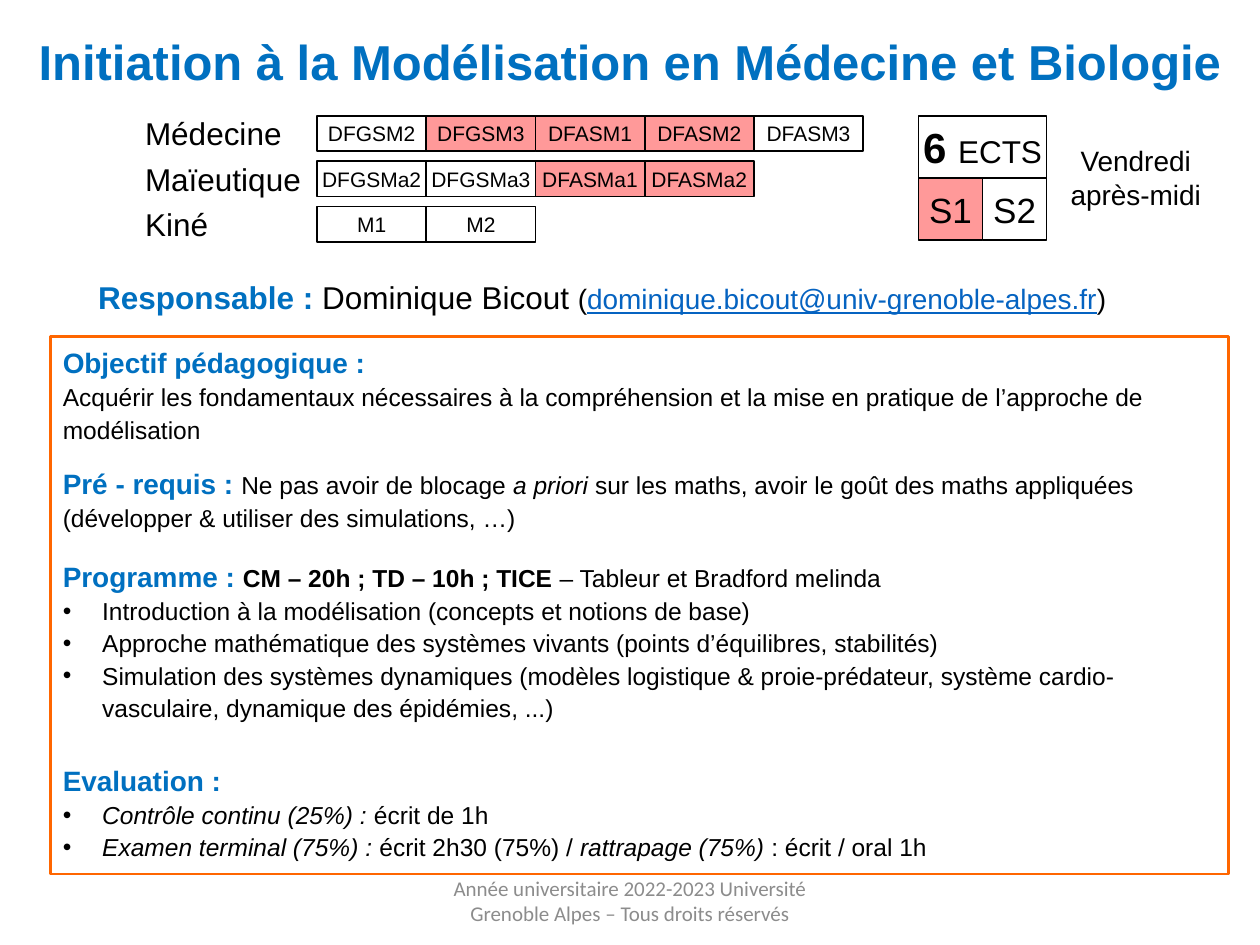
from pptx import Presentation
from pptx.dml.color import RGBColor as Rgb
from pptx.enum.shapes import MSO_SHAPE as Kind
from pptx.enum.text import MSO_ANCHOR as Anchor, PP_ALIGN as Align
from pptx.oxml.ns import qn
from pptx.util import Pt
from lxml.etree import SubElement as Sub

HUES = {"blue": "0070C0", "black": "000000", "pink": "FF9999", "white": "FFFFFF",
        "orange": "FF6600", "gray": "8C8C8C", "link": "0563C1"}

STYLES = {
    "title": (28, "blue", "b"), "head": (16, "blue", "b"), "lead": (18, "blue", "b"),
    "body": (14, "black", ""), "bold": (14, "black", "b"), "ital": (14, "black", "i"),
    "label": (18, "black", ""), "cell": (12, "black", ""), "term": (20, "black", ""),
    "count": (24, "black", "b"), "note": (16, "black", ""), "mail": (16, "link", "u"),
    "foot": (12, "gray", ""),
}

TITLE = "Initiation à la Modélisation en Médecine et Biologie"
FOOT = "Année universitaire 2022-2023 Université Grenoble Alpes – Tous droits réservés"
TRACKS = [
    ("Médecine", ["DFGSM2", "DFGSM3", "DFASM1", "DFASM2", "DFASM3"], (1, 2, 3)),
    ("Maïeutique", ["DFGSMa2", "DFGSMa3", "DFASMa1", "DFASMa2"], (2, 3)),
    ("Kiné", ["M1", "M2"], ()),
]
TERMS = [("S1", "pink"), ("S2", "white")]
DAY = ["Vendredi", "après-midi"]
CHIEF = [("Responsable : ", "lead"), ("Dominique Bicout ", "label"), ("(", "note"),
         ("dominique.bicout@univ-grenoble-alpes.fr", "mail"), (")", "note")]

COURSE = [
    (0, False, [("Objectif pédagogique :", "head")]),
    (0, False, [("Acquérir les fondamentaux nécessaires à la compréhension et la mise en "
                 "pratique de l’approche de modélisation", "body")]),
    (11, False, [("Pré - requis : ", "head"), ("Ne pas avoir de blocage", "body"),
                 (" a priori", "ital"),
                 (" sur les maths, avoir le goût des maths appliquées "
                  "(développer & utiliser des simulations, …)", "body")]),
    (13.5, False, [("Programme : ", "head"), ("CM – 20h ; TD – 10h ; TICE ", "bold"),
                   ("– Tableur et Bradford melinda", "body")]),
    (0, True, [("Introduction à la modélisation (concepts et notions de base)", "body")]),
    (0, True, [("Approche mathématique des systèmes vivants "
                "(points d’équilibres, stabilités)", "body")]),
    (0, True, [("Simulation des systèmes dynamiques (modèles logistique & proie-prédateur, "
                "système cardio-vasculaire, dynamique des épidémies, ...)", "body")]),
    (21.5, False, [("Evaluation :", "head")]),
    (0, True, [("Contrôle continu (25%) :", "ital"), (" écrit de 1h", "body")]),
    (0, True, [("Examen terminal (75%) :", "ital"), (" écrit 2h30 (75%) / ", "body"),
               ("rattrapage (75%)", "ital"), (" : écrit / oral 1h", "body")]),
]


def write(para, runs, align=Align.LEFT, face="Arial"):
    para.alignment = align
    for words, key in runs:
        size, hue, marks = STYLES[key]
        run = para.add_run()
        run.text = words
        font = run.font
        font.name, font.size = face, Pt(size)
        font.color.rgb = Rgb.from_string(HUES[hue])
        font.bold, font.italic = "b" in marks, "i" in marks
        font.underline = "u" in marks


def label(slide, area, lines, align=Align.LEFT, face="Arial", anchor=Anchor.TOP):
    frame = slide.shapes.add_textbox(*map(Pt, area)).text_frame
    frame.word_wrap, frame.vertical_anchor = True, anchor
    for num, runs in enumerate(lines):
        para = frame.add_paragraph() if num else frame.paragraphs[0]
        write(para, runs, align, face)
    return frame


def box(slide, area, fill=None, line="black", width=1):
    shape = slide.shapes.add_shape(Kind.RECTANGLE, *map(Pt, area))
    shape.shadow.inherit = False
    if fill:
        shape.fill.solid()
        shape.fill.fore_color.rgb = Rgb.from_string(HUES[fill])
    else:
        shape.fill.background()
    shape.line.color.rgb = Rgb.from_string(HUES[line])
    shape.line.width = Pt(width)
    return shape.text_frame


def cell(slide, area, runs, fill="white"):
    frame = box(slide, area, fill)
    frame.margin_left = frame.margin_right = frame.margin_top = frame.margin_bottom = 0
    frame.word_wrap, frame.vertical_anchor = False, Anchor.MIDDLE
    write(frame.paragraphs[0], runs, Align.CENTER)


def bullet(para):
    props = para._p.get_or_add_pPr()
    props.set("marL", str(Pt(22.5)))
    props.set("indent", str(-Pt(22.5)))
    Sub(props, qn("a:buFont"), typeface="Arial")
    Sub(props, qn("a:buChar"), char="•")


def main():
    deck = Presentation()
    deck.slide_width, deck.slide_height = Pt(720), Pt(540)
    slide = deck.slides.add_slide(deck.slide_layouts[6])

    head = label(slide, (0, 14.4, 720, 41), [[(TITLE, "title")]], Align.CENTER)
    head.paragraphs[0].space_before = Pt(6)

    left, top, wide, high, step = 181.2, 66.2, 62.4, 20.2, 25.9
    for row, (name, years, open_years) in enumerate(TRACKS):
        y = top + row * step
        label(slide, (75.8, y - 4.3, 104, 28.8), [[(name, "label")]])
        for col, year in enumerate(years):
            fill = "pink" if col in open_years else "white"
            cell(slide, (left + col * wide, y, wide, high), [(year, "cell")], fill)

    left, wide, high = 524.9, 36.6, 35.6
    cell(slide, (left, top, 2 * wide, high), [("6 ", "count"), ("ECTS", "label")])
    for col, (term, fill) in enumerate(TERMS):
        cell(slide, (left + col * wide, top + high, wide, high), [(term, "term")], fill)
    label(slide, (604, 78.5, 90, 46), [[(day, "note")] for day in DAY], Align.CENTER)

    chief = label(slide, (49, 155.5, 641, 28.8), [CHIEF])
    chief.paragraphs[0].space_before = Pt(6)

    frame = box(slide, (28.8, 192.2, 673.2, 307.4), line="orange", width=1.5)
    frame.word_wrap, frame.vertical_anchor = True, Anchor.TOP
    for num, (gap, dotted, runs) in enumerate(COURSE):
        para = frame.add_paragraph() if num else frame.paragraphs[0]
        write(para, runs)
        para.line_spacing, para.space_before = 1.1, Pt(gap)
        if dotted:
            bullet(para)

    label(slide, (238.3, 500.4, 243.4, 28.8), [[(FOOT, "foot")]],
          Align.CENTER, "Calibri", Anchor.MIDDLE)
    deck.save("out.pptx")


if __name__ == "__main__":
    main()
